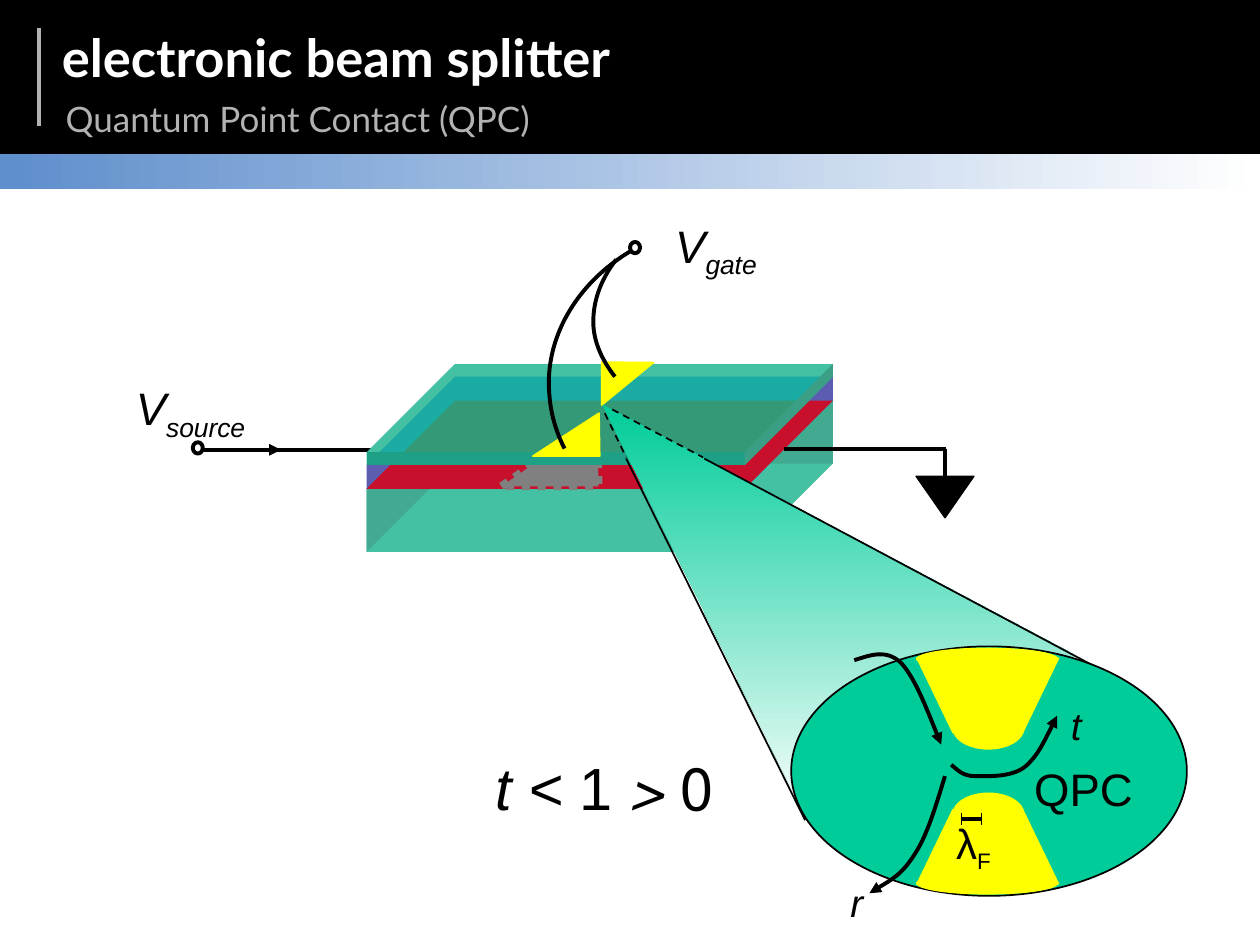
from dataclasses import dataclass
from typing import NamedTuple, Optional

from lxml import etree
from pptx import Presentation
from pptx.dml.color import RGBColor
from pptx.enum.dml import MSO_LINE
from pptx.enum.shapes import MSO_CONNECTOR, MSO_SHAPE
from pptx.enum.text import MSO_ANCHOR, MSO_AUTO_SIZE, PP_ALIGN
from pptx.oxml.ns import qn
from pptx.util import Emu, Pt

RECT, OVAL, TRIANGLE = MSO_SHAPE.RECTANGLE, MSO_SHAPE.OVAL, MSO_SHAPE.ISOSCELES_TRIANGLE
STRAIGHT, DASH, DOT = MSO_CONNECTOR.STRAIGHT, MSO_LINE.DASH, MSO_LINE.ROUND_DOT
LEFT, RIGHT = PP_ALIGN.LEFT, PP_ALIGN.RIGHT
TOP, MIDDLE = MSO_ANCHOR.TOP, MSO_ANCHOR.MIDDLE


@dataclass(frozen=True)
class Theme:
    black: str = "000000"
    white: str = "FFFFFF"
    muted: str = "B2B2B2"
    band: str = "5E8ECC"
    gate: str = "FFFF00"
    buried: str = "808080"
    lens: str = "00CC99"
    slab: str = "44C0A2"
    slab_dark: str = "42AA91"
    slab_front: str = "1DA085"
    slab_side: str = "3B9F86"
    spacer: str = "5C5CB0"
    spacer_seen: str = "1AABA3"
    electrons: str = "C8102D"
    electrons_seen: str = "339977"
    heading: str = "Lato"
    body: str = "Arial"
    title: int = 30
    subtitle: int = 20
    label: int = 26
    small: int = 22
    wavelength: int = 24
    formula: int = 34
    wire: float = 2.25
    thin: float = 1


class Run(NamedTuple):
    text: str
    size: float
    italic: bool = False
    sub: bool = False


class Label(NamedTuple):
    box: tuple
    runs: list
    wrap: bool = False
    rtl: bool = False


class Wire(NamedTuple):
    start: tuple
    end: tuple
    width: float = 2.25
    color: str = "000000"
    dash: Optional[MSO_LINE] = None
    arrow: bool = False


T = Theme()
prs = Presentation()
prs.slide_width, prs.slide_height = Emu(9144000), Emu(6858000)
UNIT = prs.slide_width / 10  # the grid has 10 columns and 7.5 rows
slide = prs.slides.add_slide(prs.slide_layouts[0])
shapes = slide.shapes


def grid(values: tuple) -> list:
    return [Emu(round(v * UNIT)) for v in values]


def paint(shape, fill: Optional[str], line: Optional[str] = None, width: float = 1,
          fade: Optional[int] = None) -> None:
    """Fill and outline a shape; fade is the angle of a gradient to white."""
    shape.shadow.inherit = False
    if fill is None:
        shape.fill.background()
    elif fade is None:
        shape.fill.solid()
        shape.fill.fore_color.rgb = RGBColor.from_string(fill)
    else:
        shape.fill.gradient()
        shape.fill.gradient_angle = fade
        for stop, color, place in zip(shape.fill.gradient_stops, (fill, T.white), (0, 1)):
            stop.color.rgb, stop.position = RGBColor.from_string(color), place
    if line is None:
        shape.line.fill.background()
    else:
        shape.line.color.rgb = RGBColor.from_string(line)
        shape.line.width = Pt(width)


def preset(kind, box: tuple, fill: Optional[str], line: Optional[str] = None,
           width: float = 1, peak: Optional[float] = None, fade: Optional[int] = None):
    shape = shapes.add_shape(kind, *grid(box))
    if peak is not None:
        shape.adjustments[0] = peak
    paint(shape, fill, line, width, fade)
    return shape


def polygon(points: list, fill: str, fade: Optional[int] = None) -> None:
    builder = shapes.build_freeform(*grid(points[0]))
    builder.add_line_segments([grid(p) for p in points[1:]], close=True)
    paint(builder.convert_to_shape(), fill, fade=fade)


def add_arrowhead(shape) -> None:
    etree.SubElement(shape.line._get_or_add_ln(), qn("a:tailEnd"), type="triangle")


def curve(points: list, arrow: bool = False) -> None:
    """A start point, then three Bezier points for every segment."""
    builder = shapes.build_freeform(*grid(points[0]))
    builder.add_line_segments([grid(p) for p in points[1:]], close=False)
    shape = builder.convert_to_shape()
    outline = shape._element.find(".//" + qn("a:path"))
    steps = outline.findall(qn("a:lnTo"))
    for i in range(0, len(steps), 3):
        bezier = etree.SubElement(outline, qn("a:cubicBezTo"))
        for step in steps[i:i + 3]:
            bezier.append(step[0])
            outline.remove(step)
    paint(shape, None, T.black, T.wire)
    if arrow:
        add_arrowhead(shape)


def connect(wire: Wire) -> None:
    line = shapes.add_connector(STRAIGHT, *grid(wire.start + wire.end))
    line.line.color.rgb = RGBColor.from_string(wire.color)
    line.line.width = Pt(wire.width)
    if wire.dash is not None:
        line.line.dash_style = wire.dash
    if wire.arrow:
        add_arrowhead(line)
    etree.SubElement(line._element.spPr, qn("a:effectLst"))


def write(label: Label) -> None:
    frame = shapes.add_textbox(*grid(label.box)).text_frame
    frame.word_wrap = label.wrap
    paragraph = frame.paragraphs[0]
    if label.rtl:
        paragraph.alignment = RIGHT
        paragraph._p.get_or_add_pPr().set("rtl", "1")
    for part in label.runs:
        run = paragraph.add_run()
        run.text = part.text
        run.font.name, run.font.size, run.font.italic = T.body, Pt(part.size), part.italic
        run.font.color.rgb = RGBColor.from_string(T.black)
        if part.sub:
            run.font._element.set("baseline", "-25000")


def heading(holder, box: tuple, text: str, size: int, color: str, bold: bool,
            anchor, spacing: float) -> None:
    holder.left, holder.top, holder.width, holder.height = grid(box)
    frame = holder.text_frame
    frame.auto_size, frame.vertical_anchor = MSO_AUTO_SIZE.NONE, anchor
    paragraph = frame.paragraphs[0]
    paragraph.alignment, paragraph.line_spacing = LEFT, spacing
    paragraph.space_before = Pt(0)
    run = paragraph.add_run()
    run.text = text
    run.font.name, run.font.size, run.font.bold = T.heading, Pt(size), bold
    run.font.color.rgb = RGBColor.from_string(color)


# Header, kept behind the placeholders
header = [preset(RECT, (0, 0, 10, 1.22), T.black, T.black, 0.75),
          preset(RECT, (0, 1.22, 10, 0.28), T.band, fade=0)]
for place, bar in enumerate(header):
    shapes._spTree.insert(2 + place, bar._element)
connect(Wire((0.31, 1), (0.31, 0.22), color=T.muted))
heading(shapes.title, (0.39, 0.04, 5.35, 0.82), "electronic beam splitter",
        T.title, T.white, True, MIDDLE, 1)
heading(slide.placeholders[1], (0.42, 0.59, 5.7, 0.57), "Quantum Point Contact (QPC)",
        T.subtitle, T.muted, False, TOP, 1.4)

# Layered sample in oblique view: front edge from X0 to X1, back edge shifted by DEPTH
X0, X1, DEPTH = 2.91, 5.91, 0.7
CAP, SPACER, GAS, BASE = 3.59, 3.69, 3.88, 4.38  # front heights of the layers


def block(top: float, bottom: float, fill: str) -> None:
    polygon([(X0, top), (X0 + DEPTH, top - DEPTH), (X1 + DEPTH, top - DEPTH),
             (X1 + DEPTH, bottom - DEPTH), (X1, bottom), (X0, bottom)], fill)


connect(Wire((1.84, 3.57), (4.08, 3.57)))
block(GAS, BASE, T.slab)
polygon([(X0, GAS), (X0 + BASE - GAS, GAS), (X0, BASE)], T.slab_dark)
polygon([(X1 + DEPTH, GAS - DEPTH), (X1 + DEPTH, BASE - DEPTH),
         (X1 + GAS + DEPTH - BASE, BASE - DEPTH)], T.slab_dark)
block(SPACER, GAS, T.spacer)
block(GAS, GAS, T.electrons)
buried_gate = preset(TRIANGLE, (3.98, 3.33, 0.77, 0.53), T.buried, T.buried, 4.5, 0.99)
buried_gate.line.dash_style = DOT
block(CAP, SPACER, T.slab)
block(SPACER, SPACER, T.spacer_seen)
shift = GAS - SPACER
polygon([(X0 + shift, SPACER), (X0 + DEPTH, GAS - DEPTH),
         (X1 + DEPTH - shift, GAS - DEPTH), (X1, SPACER)], T.electrons_seen)
polygon([(X0, CAP), (X1, CAP), (X1, SPACER), (X0, SPACER)], T.slab_front)
polygon([(X1, CAP), (X1 + DEPTH, CAP - DEPTH), (X1 + DEPTH, SPACER - DEPTH),
         (X1, SPACER)], T.slab_side)

# Gates, wiring and ground
preset(TRIANGLE, (4.23, 3.28, 0.53, 0.34), T.gate, T.gate, peak=0.99)
back_gate = preset(TRIANGLE, (4.81, 2.84, 0.34, 0.41), T.gate, T.gate, peak=0.99)
back_gate.rotation = 270
back_gate._element.spPr.find(qn("a:xfrm")).set("flipV", "1")
for wire in (Wire((6.22, 3.56), (7.51, 3.56)), Wire((7.5, 3.56), (7.5, 3.81)),
             Wire((1.6, 3.57), (2.23, 3.57), arrow=True)):
    connect(wire)
for terminal in ((5, 1.92), (1.53, 3.51)):
    preset(OVAL, terminal + (0.08, 0.09), None, T.black, T.wire)
curve([(4.48, 3.56), (4.41, 3.42), (4.37, 3.28), (4.36, 3.13),
       (4.32, 2.69), (4.57, 2.25), (5.01, 1.99)])
curve([(4.88, 2.99), (4.78, 2.86), (4.72, 2.73), (4.71, 2.59),
       (4.7, 2.41), (4.76, 2.23), (4.89, 2.06)])
preset(TRIANGLE, (7.27, 3.78, 0.46, 0.33), T.black, T.black, 0.75).rotation = 180

# Zoom cone and lens
polygon([(4.78, 3.21), (8.53, 5.2), (6.42, 6.54)], T.lens, fade=270)
for ray in (Wire((5.59, 3.64), (8.69, 5.29), T.thin), Wire((4.97, 3.64), (6.39, 6.51), T.thin),
            Wire((4.8, 3.28), (4.97, 3.63), T.thin, dash=DASH),
            Wire((4.86, 3.25), (5.58, 3.63), T.thin, dash=DASH)):
    connect(ray)
preset(OVAL, (6.28, 5.13, 3.14, 1.98), T.lens, T.black)

# Constriction: two gates mirrored about the channel
CHANNEL = 6.12
for side in (-1, 1):
    tip, rim = CHANNEL + side * 0.3, CHANNEL + side * 0.9
    polygon([(7.27, rim), (7.56, tip), (8.12, tip), (8.41, rim)], T.gate)
    preset(OVAL, (7.56, CHANNEL + side * 0.34 - 0.17, 0.57, 0.34), T.gate)
    preset(OVAL, (7.27, CHANNEL + side * 0.89 - 0.09, 1.13, 0.18), T.gate)

# Wavelength mark and electron paths
connect(Wire((7.79, 6.5), (7.63, 6.5)))
for x in (7.63, 7.79):
    connect(Wire((x, 6.45), (x, 6.55), T.thin))
for track in ([(6.78, 5.24), (6.91, 5.2), (7.03, 5.15), (7.15, 5.26),
               (7.26, 5.38), (7.36, 5.64), (7.47, 5.91)],
              [(7.5, 6.16), (7.43, 6.39), (7.36, 6.63), (7.26, 6.78),
               (7.16, 6.94), (7.03, 7.01), (6.9, 7.09)],
              [(7.55, 6.07), (7.6, 6.11), (7.64, 6.16), (7.74, 6.16), (7.84, 6.16),
               (8.02, 6.17), (8.13, 6.09), (8.23, 6.01), (8.31, 5.84), (8.39, 5.68)]):
    curve(track, arrow=True)

# Labels
for label in (
    Label((5.26, 1.68, 0.91, 0.54), [Run("V", T.label, True), Run("gate", T.label, True, True)], True),
    Label((0.98, 2.97, 1.24, 0.54), [Run("V", T.label, True), Run("source", T.label, True, True)], True),
    Label((7.49, 6.44, 0.62, 0.51), [Run("λ", T.wavelength), Run("F", T.small, sub=True)], True),
    Label((6.65, 6.93, 0.31, 0.47), [Run("r", T.small, True)]),
    Label((8.4, 5.52, 0.29, 0.47), [Run("t", T.small, True)]),
    Label((8.11, 5.99, 0.99, 0.54), [Run("QPC", T.label)]),
    Label((3.81, 5.91, 1.95, 0.67), [Run("0", T.formula), Run(" < t < ", T.formula, True),
                                     Run("1", T.formula)], rtl=True),
):
    write(label)

prs.save("out.pptx")
